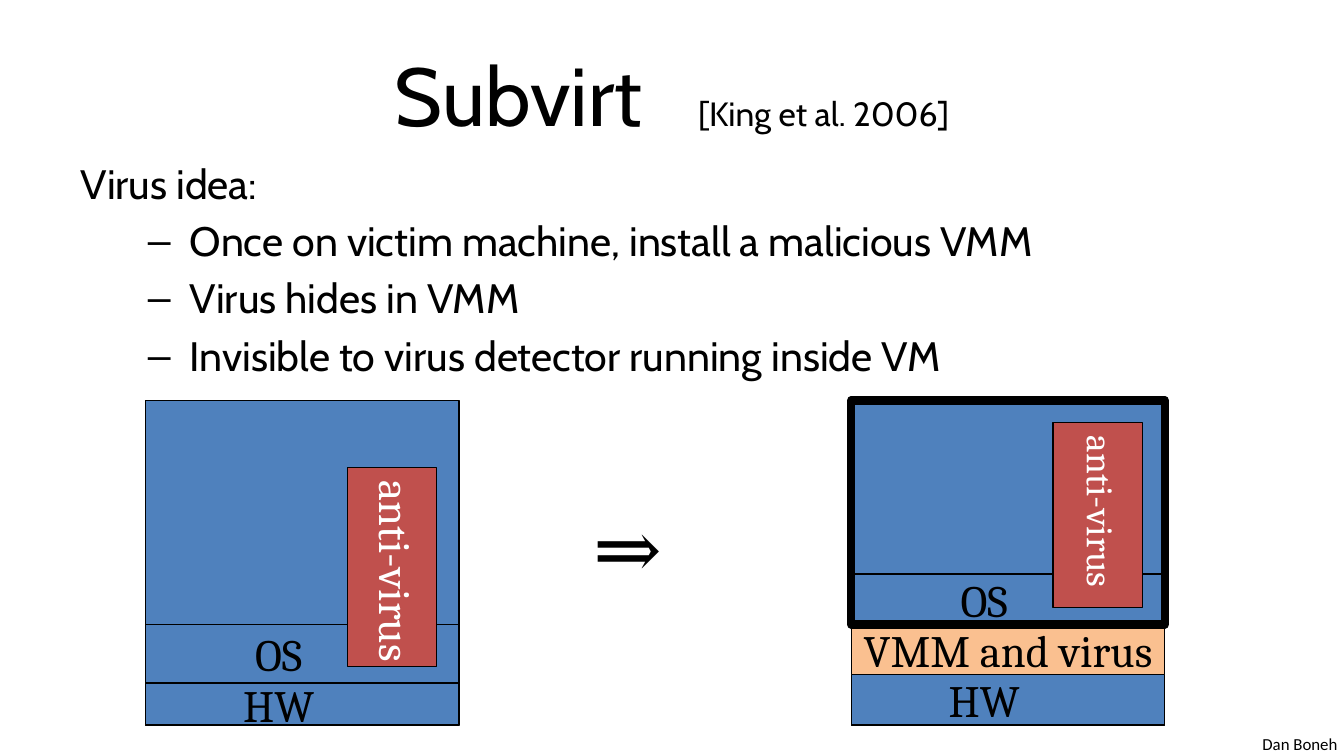
from lxml.etree import SubElement
from pptx import Presentation
from pptx.dml.color import RGBColor
from pptx.enum.shapes import MSO_SHAPE as Shape
from pptx.enum.text import MSO_ANCHOR as Anchor, MSO_AUTO_SIZE as AutoSize, PP_ALIGN as Align
from pptx.oxml.ns import qn
from pptx.util import Pt

PX = 9525
COLORS = {
    "ink": "000000",
    "paper": "FFFFFF",
    "system": "4F81BD",
    "malware": "FAC090",
    "scanner": "C0504D",
}


def color(name):
    return RGBColor.from_string(COLORS[name])


def scaled(*lengths):
    return [length * PX for length in lengths]


def place(item, left, top, width, height):
    item.left, item.top, item.width, item.height = scaled(left, top, width, height)


def add_run(para, text, size, font="Cambria", ink="ink"):
    span = para.add_run()
    span.text = text
    span.font.size = Pt(size)
    span.font.name = font
    span.font.color.rgb = color(ink)
    return span


def set_insets(frame, left=0, top=0, right=0, bottom=0):
    frame.margin_left, frame.margin_top, frame.margin_right, frame.margin_bottom = scaled(
        left, top, right, bottom)


def add_block(page, left, top, width, height, fill=None, line=0.75):
    block = page.shapes.add_shape(Shape.RECTANGLE, *scaled(left, top, width, height))
    block.shadow.inherit = False
    if fill:
        block.fill.solid()
        block.fill.fore_color.rgb = color(fill)
    else:
        block.fill.background()
    block.line.color.rgb = color("ink")
    block.line.width = Pt(line)
    return block


def add_layer(page, left, top, width, height, text, fill="system", shift=34):
    frame = add_block(page, left, top, width, height, fill).text_frame
    frame.word_wrap = True
    frame.vertical_anchor = Anchor.MIDDLE
    set_insets(frame, right=shift)
    para = frame.paragraphs[0]
    para.alignment = Align.CENTER
    add_run(para, text, 24)


def add_scanner(page, left, top, width, height, size):
    frame = add_block(page, left, top, width, height, "scanner").text_frame
    frame.word_wrap = False
    frame.vertical_anchor = Anchor.MIDDLE
    frame._txBody.bodyPr.set("vert", "eaVert")
    para = frame.paragraphs[0]
    para.alignment = Align.CENTER
    para.line_spacing = 0.8
    add_run(para, "anti-virus", size, ink="paper")


def add_label(page, left, top, width, height, text, size, font):
    frame = page.shapes.add_textbox(*scaled(left, top, width, height)).text_frame
    frame.word_wrap = False
    para = frame.paragraphs[0]
    para.alignment = Align.CENTER
    add_run(para, text, size, font)


def fill_title(page, left, top, width, height):
    title = page.shapes.title
    place(title, left, top, width, height)
    frame = title.text_frame
    frame.auto_size = AutoSize.NONE
    frame.vertical_anchor = Anchor.MIDDLE
    para = frame.paragraphs[0]
    para.alignment = Align.CENTER
    add_run(para, "Subvirt", 44, "Cabin")
    gap = add_run(para, " ", 44, "Cabin")
    gap.font._element.set("spc", "2000")
    add_run(para, "[King et al. 2006]", 18, "Cabin")


def fill_body(page, left, top, width, height):
    body = page.placeholders[1]
    place(body, left, top, width, height)
    frame = body.text_frame
    frame.auto_size = AutoSize.NONE
    heading = frame.paragraphs[0]
    add_run(heading, "Virus idea:", 22, "Cabin")
    properties = heading._p.get_or_add_pPr()
    properties.set("marL", "0")
    properties.set("indent", "0")
    SubElement(properties, qn("a:buNone"))
    for text in (
        "Once on victim machine, install a malicious VMM",
        "Virus hides in VMM",
        "Invisible to virus detector running inside VM",
    ):
        para = frame.add_paragraph()
        para.level = 1
        add_run(para, text, 22, "Cabin")


def draw_clean_machine(page, left, top, width, height):
    add_block(page, left, top, width, height, "system")
    add_layer(page, left, top + height - 30, width, 30, "HW")
    add_layer(page, left, top + height - 72, width, 42, "OS")
    add_scanner(page, left + width - 80, top + 48, 64, 142, 24)


def draw_infected_machine(page, left, top, width, height):
    layer = 36
    bottom = top + height
    add_block(page, left, top, width, height, "system")
    add_layer(page, left, bottom - layer, width, layer, "HW")
    add_layer(page, left, bottom - 3 * layer, width, layer, "OS")
    add_layer(page, left, bottom - 2 * layer, width, layer, "VMM and virus", "malware", 0)
    add_scanner(page, left + width - 80, top + 16, 64, 132, 20)
    add_block(page, left, top, width, height - 2 * layer, line=4.5)


def main():
    deck = Presentation()
    deck.slide_width, deck.slide_height = scaled(960, 540)
    page = deck.slides.add_slide(deck.slide_layouts[1])
    fill_title(page, 48, 22, 864, 90)
    fill_body(page, 48, 108, 880, 420)
    draw_clean_machine(page, 104, 286, 224, 232)
    add_label(page, 402, 350, 93, 81, "⇒", 44, "Cambria")
    draw_infected_machine(page, 608, 286, 224, 232)
    add_label(page, 892, 519, 73, 24, "Dan Boneh", 9, "Calibri")
    deck.save("out.pptx")


if __name__ == "__main__":
    main()
